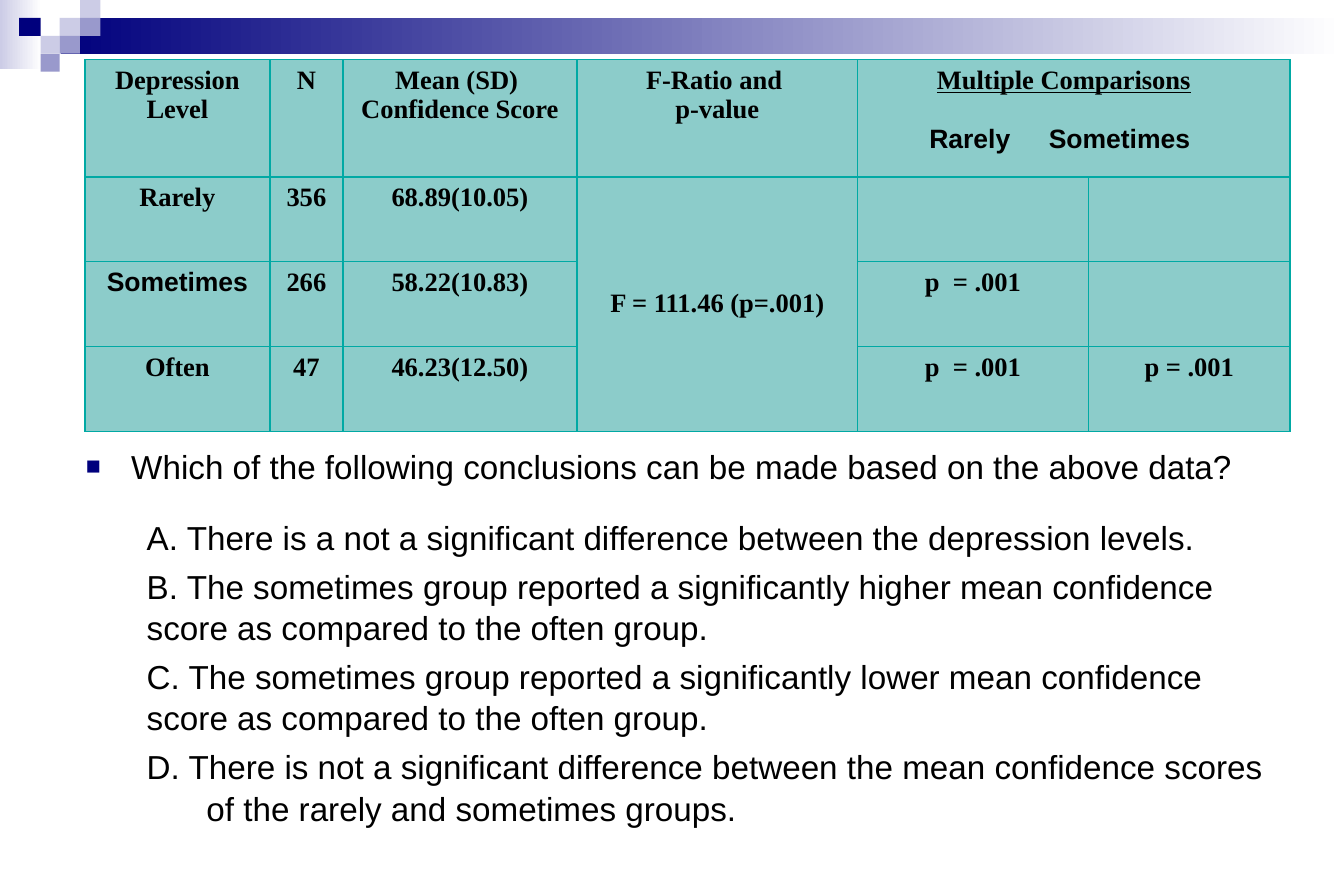
"""Build a quiz slide with a depression-level results table and four answers."""
from dataclasses import dataclass

from lxml import etree
from pptx import Presentation
from pptx.dml.color import RGBColor
from pptx.enum.shapes import MSO_SHAPE
from pptx.enum.text import MSO_ANCHOR, PP_ALIGN
from pptx.oxml.ns import qn
from pptx.util import Pt

RECTANGLE = MSO_SHAPE.RECTANGLE
MIDDLE = MSO_ANCHOR.MIDDLE
LEFT, CENTER = PP_ALIGN.LEFT, PP_ALIGN.CENTER
PX = 9144


@dataclass(frozen=True)
class Theme:
    navy: str = "00007D"
    violet: str = "9999CC"
    lavender: str = "CCCCE6"
    white: str = "FFFFFF"
    black: str = "000000"
    cell: str = "8CCCCA"
    border: str = "00A9A4"
    sans: str = "Arial"
    serif: str = "Times New Roman"
    table_size: int = 16
    body_size: int = 20


THEME = Theme()


def write_text(paragraph, text, *, font=THEME.sans, size=THEME.body_size, bold=False,
               underline=False, align=LEFT, before=0, line=1.0, margin=0, indent=0):
    paragraph.text = text
    paragraph.alignment = align
    paragraph.space_before = Pt(before)
    paragraph.line_spacing = line
    properties = paragraph._p.get_or_add_pPr()
    properties.set("marL", str(margin * PX))
    properties.set("indent", str(indent * PX))
    for run in paragraph.runs:
        run.font.name = font
        run.font.size = Pt(size)
        run.font.bold = bold
        run.font.underline = underline
        run.font.color.rgb = RGBColor.from_string(THEME.black)
    return properties


def add_child(parent, tag, **attributes):
    return etree.SubElement(parent, qn(tag), attributes)


presentation = Presentation()
presentation.slide_width = 1125 * PX
presentation.slide_height = 750 * PX
slide = presentation.slides.add_slide(presentation.slide_layouts[6])

banner = [
    (0, 0, 35, 58, (THEME.lavender, THEME.white)),
    (51, 15, 1074, 30, (THEME.navy, THEME.white)),
    (50, 15, 17, 15, (THEME.lavender,)),
    (67, 0, 17, 15, (THEME.lavender,)),
    (67, 15, 17, 15, (THEME.violet,)),
    (34, 30, 16, 15, (THEME.lavender,)),
    (16, 15, 18, 15, (THEME.navy,)),
    (50, 30, 17, 15, (THEME.violet,)),
    (34, 45, 16, 15, (THEME.violet,)),
]
for left, top, width, height, colors in banner:
    shape = slide.shapes.add_shape(RECTANGLE, left * PX, top * PX, width * PX, height * PX)
    shape.shadow.inherit = False
    shape.line.fill.background()
    if len(colors) == 1:
        shape.fill.solid()
        shape.fill.fore_color.rgb = RGBColor.from_string(colors[0])
    else:
        shape.fill.gradient()
        shape.fill.gradient_angle = 0
        for stop, color in zip(shape.fill.gradient_stops, colors):
            stop.color.rgb = RGBColor.from_string(color)

question_box = slide.shapes.add_textbox(62 * PX, 367 * PX, 1012 * PX, 370 * PX)
question_frame = question_box.text_frame
question_frame.word_wrap = True
question = write_text(
    question_frame.paragraphs[0],
    "Which of the following conclusions can be made based on the above data?",
    line=1.04, margin=38, indent=-38, before=4.5)
bullet_color = add_child(question, "a:buClr")
add_child(bullet_color, "a:srgbClr", val=THEME.navy)
add_child(question, "a:buSzPct", val="75000")
add_child(question, "a:buFont", typeface=THEME.sans)
add_child(question, "a:buChar", char="■")

answers = [
    "A. There is a not a significant difference between the depression levels.",
    "B. The sometimes group reported a significantly higher mean confidence "
    "score as compared to the often group.",
    "C. The sometimes group reported a significantly lower mean confidence "
    "score as compared to the often group.",
    "D. There is not a significant difference between the mean confidence scores "
    "\tof the rarely and sometimes groups.",
]
for index, answer in enumerate(answers):
    write_text(question_frame.add_paragraph(), answer, line=1.04, margin=51,
               before=4.5 if index else 18)

column_widths = [155, 61, 196, 235, 193, 169]
row_heights = [98, 71, 71, 71]
rows = [
    ["Depression Level", "N", "Mean (SD) \vConfidence Score", "F-Ratio and \vp-value",
     "Multiple Comparisons", ""],
    ["Rarely", "356", "68.89(10.05)", "F = 111.46 (p=.001)", "", ""],
    ["Sometimes", "266", "58.22(10.83)", "", "p  = .001", ""],
    ["Often", "47", "46.23(12.50)", "", "p  = .001", "p = .001"],
]
table_frame = slide.shapes.add_table(
    len(rows), len(column_widths), 71 * PX, 50 * PX,
    sum(column_widths) * PX, sum(row_heights) * PX)
table = table_frame.table
table.first_row = False
table.horz_banding = False
for column, width in zip(table.columns, column_widths):
    column.width = width * PX
for row, height in zip(table.rows, row_heights):
    row.height = height * PX

comparisons = table.cell(0, 4)
comparisons.merge(table.cell(0, 5))
ratio = table.cell(1, 3)
ratio.merge(table.cell(3, 3))
ratio.vertical_anchor = MIDDLE

for row_index, texts in enumerate(rows):
    for column_index, text in enumerate(texts):
        cell = table.cell(row_index, column_index)
        cell_properties = cell._tc.get_or_add_tcPr()
        for side in ("a:lnL", "a:lnR", "a:lnT", "a:lnB"):
            border = add_child(cell_properties, side, w=str(Pt(1)))
            border_fill = add_child(border, "a:solidFill")
            add_child(border_fill, "a:srgbClr", val=THEME.border)
        cell.fill.solid()
        cell.fill.fore_color.rgb = RGBColor.from_string(THEME.cell)
        if text:
            write_text(cell.text_frame.paragraphs[0], text, size=THEME.table_size,
                       font=THEME.sans if text == "Sometimes" else THEME.serif,
                       bold=True, underline=text == "Multiple Comparisons", align=CENTER)

comparisons.margin_right = 27 * PX
groups = write_text(comparisons.text_frame.add_paragraph(), "\tRarely\tSometimes",
                    size=THEME.table_size, bold=True, before=18)
tab_list = add_child(groups, "a:tabLst")
for position in (18, 202):
    add_child(tab_list, "a:tab", pos=str(position * PX), algn="l")

presentation.save("out.pptx")
